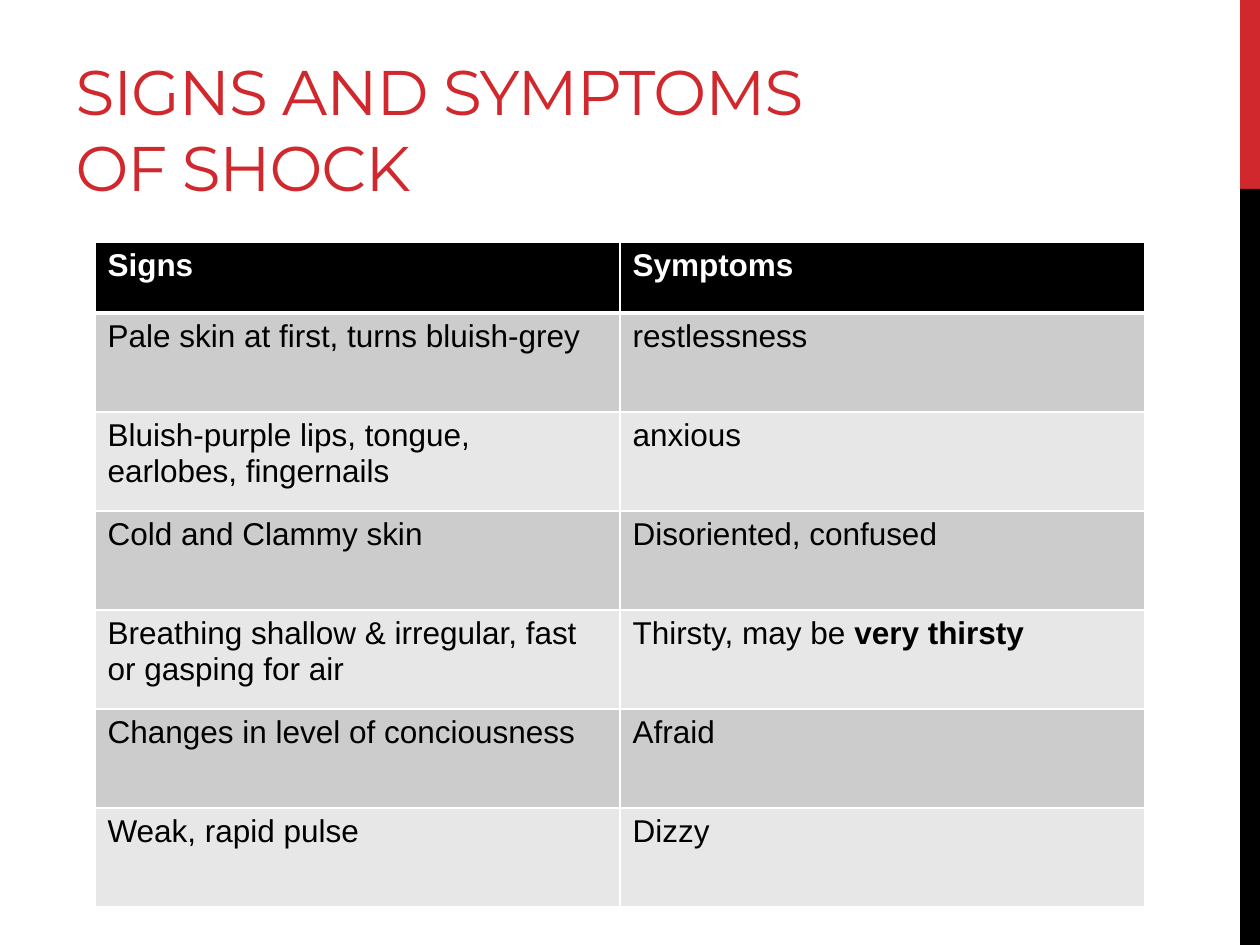
from lxml.etree import fromstring
from pptx import Presentation
from pptx.dml.color import RGBColor as RGB
from pptx.enum.shapes import MSO_SHAPE as Shape
from pptx.enum.text import MSO_ANCHOR as Anchor, MSO_AUTO_SIZE as Auto, PP_ALIGN as Align
from pptx.util import Emu, Pt

HUES = {"red": "D1282E", "black": "000000", "white": "FFFFFF",
        "dark": "CCCCCC", "light": "E7E7E7"}
NS = "http://schemas.openxmlformats.org/drawingml/2006/main"


def px(*nums):
    return [Emu(round(n * 914400 / 126)) for n in nums]


def add_run(para, text, font, size, hue, bold=False):
    run = para.add_run()
    run.text = text
    run.font.name = font
    run.font.size = Pt(size)
    run.font.bold = bold
    run.font.color.rgb = RGB.from_string(HUES[hue])
    return run


deck = Presentation()
deck.slide_width, deck.slide_height = px(1260, 945)
slide = deck.slides.add_slide(deck.slide_layouts[5])

# Side bars
for top, high, hue in [(0, 189, "red"), (189, 756, "black")]:
    bar = slide.shapes.add_shape(Shape.RECTANGLE, *px(1240, top, 20, high))
    bar.shadow.inherit = False
    bar.fill.solid()
    bar.fill.fore_color.rgb = RGB.from_string(HUES[hue])
    bar.line.fill.background()

# Title
title = slide.shapes.title
title.left, title.top, title.width, title.height = px(63, 21, 798, 189)
frame = title.text_frame
frame.word_wrap = True
frame.auto_size = Auto.NONE
frame.vertical_anchor = Anchor.BOTTOM
para = frame.paragraphs[0]
para.alignment = Align.LEFT
run = add_run(para, "SIGNS AND SYMPTOMS OF SHOCK", "Montserrat", 36, "red")
run.font._element.set("spc", "-60")

# Table: each cell is a list of runs, bold ones marked True
rows = [
    ([("Signs", True)], [("Symptoms", True)]),
    ([("Pale skin at first, turns bluish-grey", False)], [("restlessness", False)]),
    ([("Bluish-purple lips, tongue, earlobes, fingernails", False)], [("anxious", False)]),
    ([("Cold and Clammy skin", False)], [("Disoriented, confused", False)]),
    ([("Breathing shallow & irregular, fast or gasping for air", False)],
     [("Thirsty, may be ", False), ("very thirsty", True)]),
    ([("Changes in level of conciousness", False)], [("Afraid", False)]),
    ([("Weak, rapid pulse", False)], [("Dizzy", False)]),
]
table = slide.shapes.add_table(len(rows), 2, *px(95, 242, 1050, 665)).table
for col in table.columns:
    col.width = px(525)[0]

for r, row in enumerate(rows):
    table.rows[r].height = px(99 if r else 71)[0]
    back = "black" if r == 0 else "dark" if r % 2 else "light"
    for c, parts in enumerate(row):
        cell = table.cell(r, c)
        cell.fill.solid()
        cell.fill.fore_color.rgb = RGB.from_string(HUES[back])
        for text, bold in parts:
            add_run(cell.text_frame.paragraphs[0], text, "Arial", 18,
                    "black" if r else "white", bold)

        # White borders, thick below the header
        props = cell._tc.get_or_add_tcPr()
        for i, side in enumerate("LRTB"):
            thick = (r, side) in [(0, "B"), (1, "T")]
            props.insert(i, fromstring(
                f'<a:ln{side} xmlns:a="{NS}" w="{Pt(3 if thick else 1)}"><a:solidFill>'
                f'<a:srgbClr val="{HUES["white"]}"/></a:solidFill></a:ln{side}>'))

deck.save("out.pptx")
